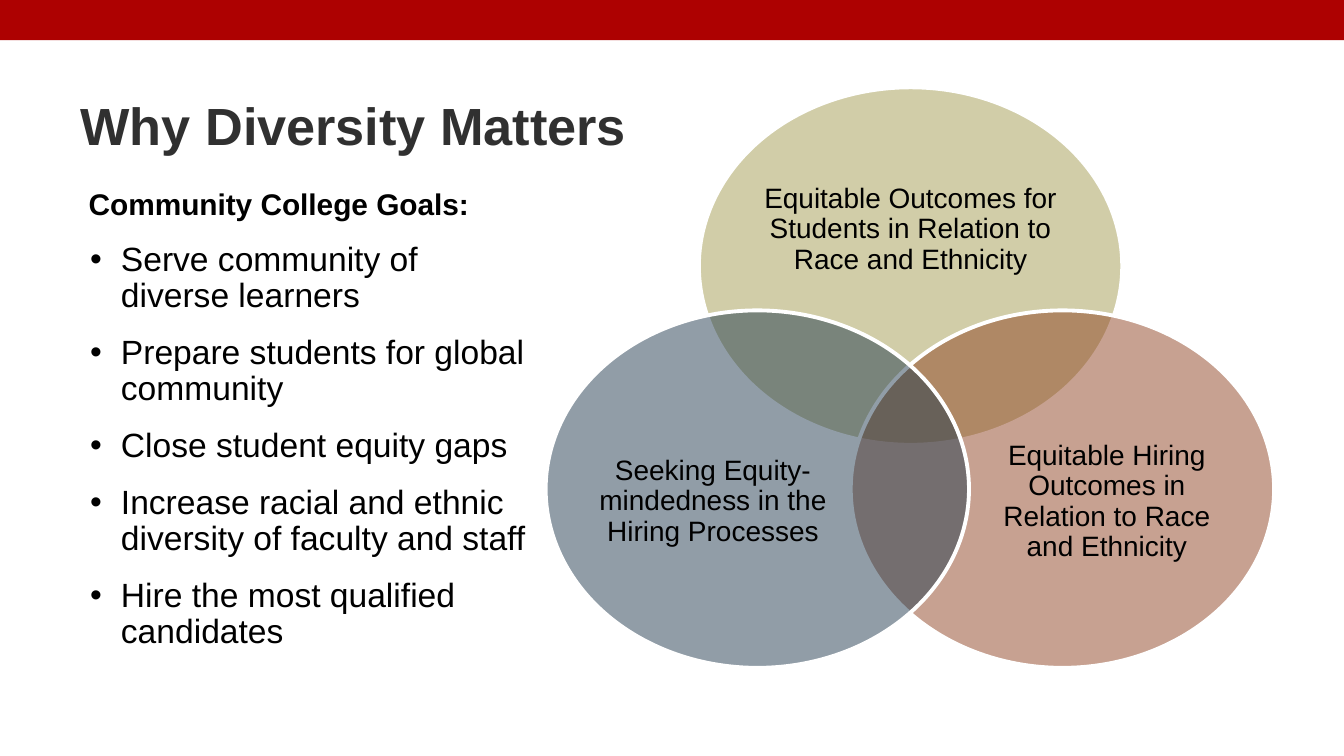
from dataclasses import dataclass

from lxml import etree
from pptx import Presentation, util as u
from pptx.dml.color import RGBColor
from pptx.enum import shapes, text
from pptx.oxml.ns import qn

FONT = "Arial"
BLACK, WHITE, RED, CHARCOAL = "000000", "FFFFFF", "AD0101", "303030"
PAGE_WIDTH = 10
PAGE_HEIGHT = PAGE_WIDTH * 9 / 16
CIRCLE_WIDTH, CIRCLE_HEIGHT = 3.15, 2.66
FILL_OPACITY = 49


@dataclass(frozen=True)
class Area:
    left: float
    top: float
    width: float
    height: float

    def lengths(self) -> tuple:
        return tuple(u.Inches(n) for n in (self.left, self.top, self.width, self.height))


@dataclass(frozen=True)
class VennCircle:
    left: float
    top: float
    color: str
    label: str
    label_area: Area


GOALS = [
    "Serve community of diverse learners",
    "Prepare students for global community",
    "Close student equity gaps",
    "Increase racial and ethnic diversity of faculty and staff",
    "Hire the most qualified candidates",
]

CIRCLES = [
    VennCircle(5.2, 0.65, "A39B4E",
               "Equitable Outcomes for Students in Relation to Race and Ethnicity",
               Area(5.62, 1.11, 2.31, 1.2)),
    VennCircle(6.33, 2.31, "8D4120",
               "Equitable Hiring Outcomes in Relation to Race and Ethnicity",
               Area(7.29, 3, 1.89, 1.47)),
    VennCircle(4.06, 2.31, "1F394D",
               "Seeking Equity-mindedness in the Hiring Processes",
               Area(4.36, 3, 1.89, 1.47)),
]


def rgb(value: str) -> RGBColor:
    return RGBColor.from_string(value)


def place(shape, area: Area) -> None:
    shape.left, shape.top, shape.width, shape.height = area.lengths()


def set_font(para, size: float, color: str = BLACK, bold: bool = False) -> None:
    para.font.name = FONT
    para.font.size = u.Pt(size)
    para.font.bold = bold
    para.font.color.rgb = rgb(color)


def set_bullet(para, char: str = "") -> None:
    """Give the paragraph a hanging bullet, or none when char is empty."""
    props = para._p.get_or_add_pPr()
    props.set("marL", str(u.Inches(0.24 if char else 0)))
    props.set("indent", str(u.Inches(-0.23 if char else 0)))
    if not char:
        etree.SubElement(props, qn("a:buNone"))
        return
    color = etree.SubElement(props, qn("a:buClr"))
    etree.SubElement(color, qn("a:srgbClr"), val=BLACK)
    etree.SubElement(props, qn("a:buFont"), typeface=FONT)
    etree.SubElement(props, qn("a:buChar"), char=char)


def add_filled_shape(page, kind, area: Area, color: str):
    shape = page.shapes.add_shape(kind, *area.lengths())
    shape.shadow.inherit = False
    shape.fill.solid()
    shape.fill.fore_color.rgb = rgb(color)
    shape.line.fill.background()
    return shape


def write_title(page) -> None:
    title = page.shapes.title
    place(title, Area(0.5, 0.17, 4.59, 1.04))
    frame = title.text_frame
    frame.text = "Why Diversity Matters"
    frame.auto_size = text.MSO_AUTO_SIZE.NONE
    frame.vertical_anchor = text.MSO_ANCHOR.BOTTOM
    para = frame.paragraphs[0]
    para.alignment = text.PP_ALIGN.LEFT
    set_font(para, 28, CHARCOAL, bold=True)


def write_goals(page) -> None:
    body = page.placeholders[1]
    place(body, Area(0.56, 1.36, 3.47, 4.1))
    frame = body.text_frame
    frame.text = "\n".join(["Community College Goals:", *GOALS])
    frame.auto_size = text.MSO_AUTO_SIZE.NONE
    for index, para in enumerate(frame.paragraphs):
        is_goal = index > 0
        para.line_spacing = 0.9
        para.space_before = u.Pt(11 if is_goal else 0)
        set_bullet(para, "•" if is_goal else "")
        set_font(para, 18 if is_goal else 16, bold=not is_goal)


def draw_circle(page, circle: VennCircle) -> None:
    area = Area(circle.left, circle.top, CIRCLE_WIDTH, CIRCLE_HEIGHT)
    oval = add_filled_shape(page, shapes.MSO_SHAPE.OVAL, area, circle.color)
    color = oval._element.spPr.find(qn("a:solidFill")).find(qn("a:srgbClr"))
    etree.SubElement(color, qn("a:alpha"), val=str(FILL_OPACITY * 1000))
    oval.line.color.rgb = rgb(WHITE)
    oval.line.width = u.Pt(2.08)

    box = page.shapes.add_textbox(*circle.label_area.lengths())
    frame = box.text_frame
    frame.word_wrap = True
    frame.vertical_anchor = text.MSO_ANCHOR.MIDDLE
    frame.margin_left = frame.margin_right = frame.margin_top = frame.margin_bottom = 0
    frame.text = circle.label
    para = frame.paragraphs[0]
    para.alignment = text.PP_ALIGN.CENTER
    para.line_spacing = 0.9
    set_font(para, 15)


def main() -> None:
    deck = Presentation()
    deck.slide_width, deck.slide_height = u.Inches(PAGE_WIDTH), u.Inches(PAGE_HEIGHT)
    page = deck.slides.add_slide(deck.slide_layouts[1])
    add_filled_shape(page, shapes.MSO_SHAPE.RECTANGLE, Area(0, 0, PAGE_WIDTH, 0.3), RED)
    write_title(page)
    write_goals(page)
    for circle in CIRCLES:
        draw_circle(page, circle)
    deck.save("out.pptx")


if __name__ == "__main__":
    main()
